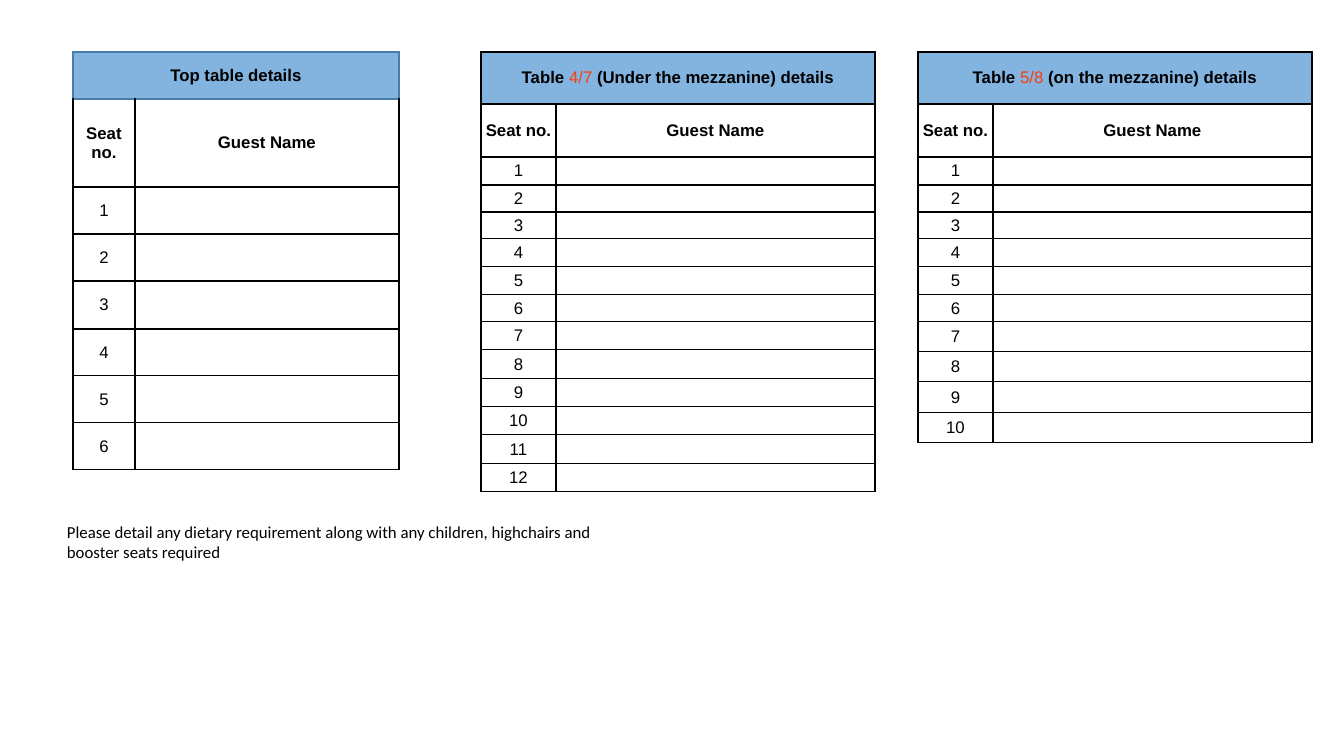
from dataclasses import dataclass

from lxml import etree
from pptx import Presentation
from pptx.dml.color import RGBColor
from pptx.enum.text import MSO_ANCHOR, PP_ALIGN
from pptx.oxml.ns import qn
from pptx.slide import Slide
from pptx.table import _Cell as Cell
from pptx.text.text import _Paragraph as Para
from pptx.util import Pt

CENTER = PP_ALIGN.CENTER
MIDDLE = MSO_ANCHOR.MIDDLE

BLACK = RGBColor(0x00, 0x00, 0x00)
WHITE = RGBColor(0xFF, 0xFF, 0xFF)
BLUE = RGBColor(0x83, 0xB3, 0xDF)
NAVY = RGBColor(0x48, 0x7C, 0xA9)
RED = RGBColor(0xF5, 0x3F, 0x0E)

SCALE = 914400 / 100.8
WIDE, HIGH = 1344, 756
TOP = 52
SIZE = Pt(12)
LINE = Pt(1)

PLAIN = {"name": "Arial", "size": SIZE, "bold": False, "color": BLACK}
BOLD = PLAIN | {"bold": True}
ACCENT = PLAIN | {"color": RED}
NOTE = PLAIN | {"name": "Calibri"}
ZERO = dict.fromkeys(
    ("margin_left", "margin_top", "margin_right", "margin_bottom"), 0)


@dataclass(frozen=True)
class Run:
    text: str
    style: dict


@dataclass(frozen=True)
class Band:
    """Seats that share a height in px."""
    seats: int
    height: int


@dataclass(frozen=True)
class Plan:
    left: int
    cols: tuple[int, int]
    heads: tuple[int, int]
    bands: tuple[Band, ...]
    title: tuple[Run, ...]
    edge: RGBColor = BLACK


PLANS = (
    Plan(73, (62, 264), (47, 88), (Band(6, 283),),
         (Run("Top table details", BOLD),), NAVY),
    Plan(481, (75, 319), (52, 53), (Band(6, 165), Band(6, 170)),
         (Run("Table ", BOLD), Run("4/7 ", ACCENT),
          Run("(Under the mezzanine) details", BOLD))),
    Plan(918, (75, 319), (52, 53), (Band(6, 165), Band(4, 121)),
         (Run("Table ", BOLD), Run("5/8 ", ACCENT),
          Run("(on the mezzanine) details", BOLD))),
)


def px(count: int) -> int:
    return round(count * SCALE)


def split(band: Band) -> list[int]:
    """Share a band's height among its seats in whole px."""
    marks = [round(i * band.height / band.seats)
             for i in range(band.seats + 1)]
    return [end - start for start, end in zip(marks, marks[1:])]


def write(para: Para, runs: tuple[Run, ...]) -> None:
    for item in runs:
        run = para.add_run()
        run.text = item.text
        for key, value in item.style.items():
            if key == "color":
                run.font.color.rgb = value
            else:
                setattr(run.font, key, value)


def edge(cell: Cell, color: RGBColor, top: RGBColor) -> None:
    """Draw the four borders, the top one in its own colour."""
    props = cell._tc.get_or_add_tcPr()
    for side in "LRTB":
        line = etree.SubElement(props, qn(f"a:ln{side}"), w=str(LINE))
        fill = etree.SubElement(line, qn("a:solidFill"))
        etree.SubElement(fill, qn("a:srgbClr"),
                         val=str(top if side == "T" else color))


def fill_cell(cell: Cell, runs: tuple[Run, ...]) -> None:
    for key, value in (ZERO | {"vertical_anchor": MIDDLE}).items():
        setattr(cell, key, value)
    para = cell.text_frame.paragraphs[0]
    para.alignment = CENTER
    write(para, runs)
    if not runs:
        # Keeps the default 18 pt from stretching a row with no guest.
        etree.SubElement(para._p, qn("a:endParaRPr"), sz=str(int(SIZE.pt * 100)))


def add_plan(slide: Slide, plan: Plan) -> None:
    seats = [size for band in plan.bands for size in split(band)]
    sizes = [*plan.heads, *seats]
    frame = slide.shapes.add_table(
        len(sizes), 2, px(plan.left), px(TOP), px(sum(plan.cols)), px(sum(sizes)))
    table = frame.table
    table.first_row = table.horz_banding = False
    for col, width in zip(table.columns, plan.cols):
        col.width = px(width)
    for row, size in zip(table.rows, sizes):
        row.height = px(size)

    table.cell(0, 0).merge(table.cell(0, 1))
    heads = ((Run("Seat no.", BOLD),), (Run("Guest Name", BOLD),))
    rows = [(plan.title, ()), heads]
    rows += [((Run(str(seat), PLAIN),), ()) for seat in range(1, len(seats) + 1)]
    for i, texts in enumerate(rows):
        for j, runs in enumerate(texts):
            cell = table.cell(i, j)
            fill_cell(cell, runs)
            edge(cell, BLACK if i else plan.edge, BLACK if i > 1 else plan.edge)
            if i:
                cell.fill.background()
            else:
                cell.fill.solid()
                cell.fill.fore_color.rgb = BLUE


def add_note(slide: Slide) -> None:
    box = slide.shapes.add_textbox(px(62), px(517), px(549), px(50))
    box.fill.solid()
    box.fill.fore_color.rgb = WHITE
    frame = box.text_frame
    frame.word_wrap = True
    for key in ZERO:
        setattr(frame, key, px(5))
    write(frame.paragraphs[0], (Run(
        "Please detail any dietary requirement along with any children, "
        "highchairs and booster seats required", NOTE),))


def main() -> None:
    deck = Presentation()
    deck.slide_width, deck.slide_height = px(WIDE), px(HIGH)
    slide = deck.slides.add_slide(deck.slide_layouts.get_by_name("Blank"))
    for plan in PLANS:
        add_plan(slide, plan)
    add_note(slide)
    deck.save("out.pptx")


if __name__ == "__main__":
    main()
